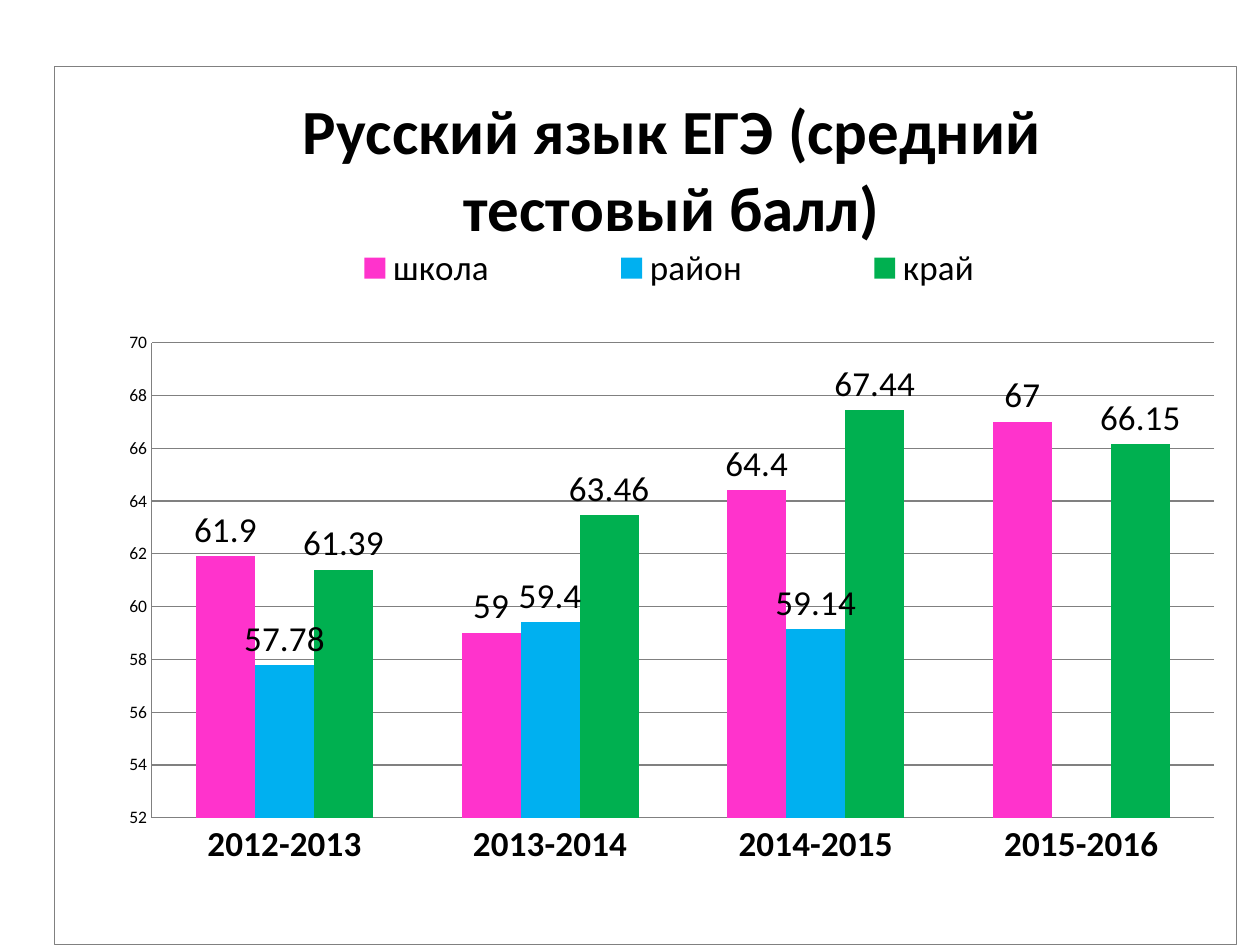
from lxml import etree
from pptx import Presentation
from pptx.chart.data import CategoryChartData
from pptx.dml.color import RGBColor
from pptx.enum import chart as ch
from pptx.oxml import ns
from pptx.util import Inches, Pt

# Content
TITLE = "Русский язык ЕГЭ (средний тестовый балл)"
YEARS = ["2012-2013", "2013-2014", "2014-2015", "2015-2016"]
PINK = RGBColor(0xFF, 0x33, 0xCC)
BLUE = RGBColor(0x00, 0xB0, 0xF0)
GREEN = RGBColor(0x00, 0xB0, 0x50)
GREY = RGBColor(0x80, 0x80, 0x80)
BLACK = RGBColor(0, 0, 0)
SCORES = [
    ("школа", PINK, [61.9, 59, 64.4, 67]),
    ("район", BLUE, [57.78, 59.4, 59.14, None]),
    ("край", GREEN, [61.39, 63.46, 67.44, 66.15]),
]


def set_font(font, **values):
    for name, value in values.items():
        setattr(font, name, value)
    font.color.rgb = BLACK


def set_line(line):
    line.color.rgb = GREY
    line.width = Pt(0.75)


def place(part, after, inner=False, **fractions):
    """Give a chart part a manual layout in fractions of the chart area."""
    for old in part.findall(ns.qn("c:layout")):
        part.remove(old)
    layout = etree.Element(ns.qn("c:layout"))
    manual = etree.SubElement(layout, ns.qn("c:manualLayout"))
    settings = [("layoutTarget", "inner")] if inner else []
    settings += [(axis + "Mode", "edge") for axis in "xy"]
    settings += fractions.items()
    for tag, value in settings:
        etree.SubElement(manual, ns.qn("c:" + tag)).set("val", str(value))
    if after:
        part.find(ns.qn(after)).addnext(layout)
    else:
        part.insert(0, layout)


# Slide
deck = Presentation()
deck.slide_width, deck.slide_height = Inches(10), Inches(7.5)
slide = deck.slides.add_slide(deck.slide_layouts[6])

# Chart
data = CategoryChartData()
data.categories = YEARS
for name, _, values in SCORES:
    data.add_series(name, values)
chart = slide.shapes.add_chart(
    ch.XL_CHART_TYPE.COLUMN_CLUSTERED,
    Inches(0.43), Inches(0.52), Inches(9.39), Inches(6.98), data).chart
set_font(chart.font, name="Calibri", size=Pt(10))

# Title
chart.has_title = True
heading = chart.chart_title.text_frame
heading.text = TITLE
set_font(heading.paragraphs[0].runs[0].font, name="Calibri", size=Pt(36), bold=True)

# Legend
chart.has_legend = True
legend = chart.legend
legend.position = ch.XL_LEGEND_POSITION.RIGHT
legend.include_in_layout = False
set_font(legend.font, size=Pt(20))

# Columns and their labels
columns = chart.plots[0]
columns.gap_width, columns.overlap = 150, 0
columns.vary_by_categories = False
for series, (_, color, _) in zip(columns.series, SCORES):
    series.format.fill.solid()
    series.format.fill.fore_color.rgb = color
    labels = series.data_labels
    labels.show_value = True
    labels.position = ch.XL_LABEL_POSITION.OUTSIDE_END
    set_font(labels.font, size=Pt(20))

# Axes
years, scores = chart.category_axis, chart.value_axis
for axis in (years, scores):
    axis.major_tick_mark = axis.minor_tick_mark = ch.XL_TICK_MARK.NONE
    set_line(axis.format.line)
set_font(years.tick_labels.font, size=Pt(20), bold=True)
set_font(scores.tick_labels.font, size=Pt(10))
scores.minimum_scale, scores.maximum_scale, scores.major_unit = 52, 70, 2
scores.has_major_gridlines = True
set_line(scores.major_gridlines.format.line)

# Positions inside the chart
space = chart.element
place(space.find(".//" + ns.qn("c:plotArea")), None, inner=True,
      x=0.082, y=0.315, w=0.899, h=0.541)
place(space.find(".//" + ns.qn("c:legend")), "c:legendPos",
      x=0.16, y=0.19, w=0.72, h=0.08)
place(space.find(".//" + ns.qn("c:title")), "c:tx", x=0.2, y=0.01)

# Thin border round the chart
border = etree.fromstring(
    f'<c:spPr xmlns:c="{ns.nsdecls("c").split(chr(34))[1]}" '
    f'{ns.nsdecls("a")}><a:ln w="{Pt(0.75)}"><a:solidFill>'
    f'<a:srgbClr val="{GREY}"/></a:solidFill></a:ln></c:spPr>')
space.find(ns.qn("c:chart")).addnext(border)

deck.save("out.pptx")
